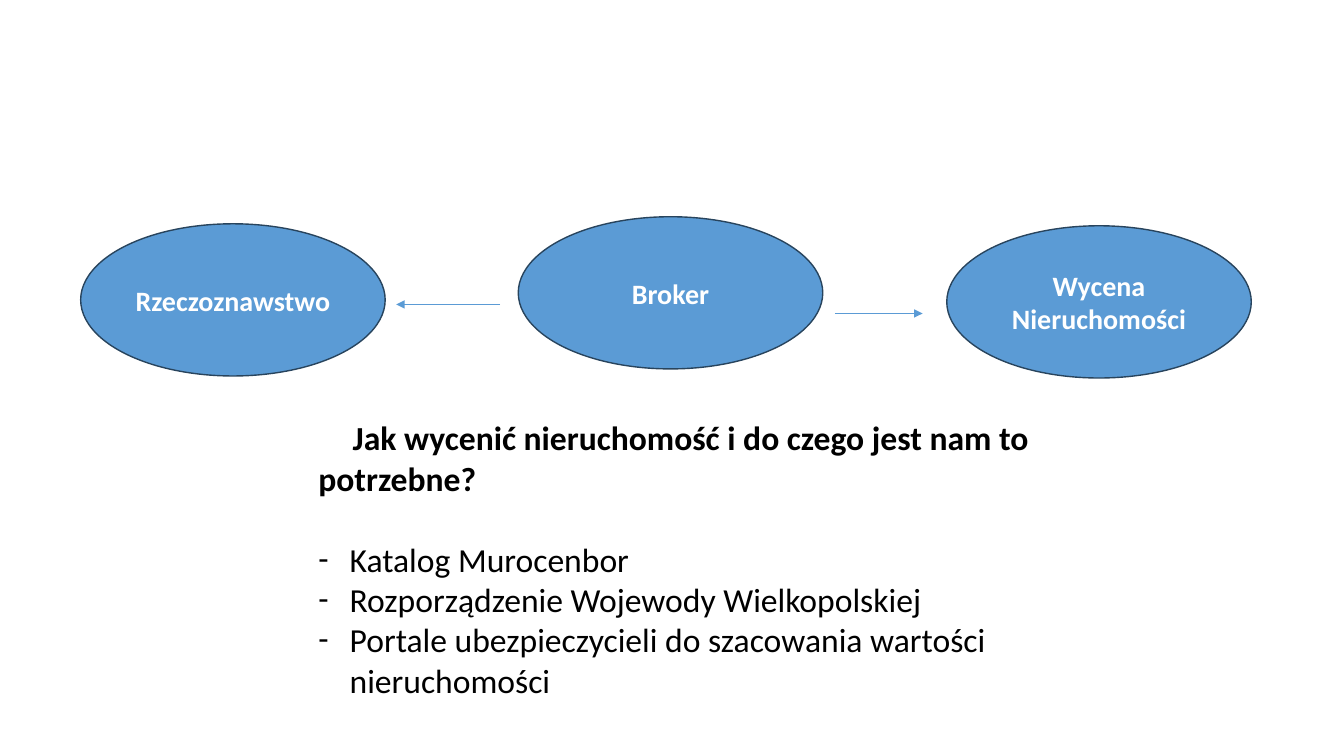
from lxml.etree import SubElement
from pptx import Presentation
from pptx.dml.color import RGBColor
from pptx.enum.shapes import MSO_CONNECTOR, MSO_SHAPE
from pptx.enum.text import MSO_ANCHOR, MSO_AUTO_SIZE, PP_ALIGN
from pptx.oxml.ns import qn
from pptx.util import Inches, Pt

FONT = "Calibri"
BLUE, OUTLINE, WHITE, BLACK = "5B9BD5", "28445D", "FFFFFF", "000000"

# label, left, top
ROLES = [
    ("Rzeczoznawstwo", 0.8, 2.22),
    ("Broker", 5.14, 2.15),
    ("Wycena Nieruchomości", 9.39, 2.24),
]
ROLE_WIDTH, ROLE_HEIGHT = 3.02, 1.51

# start x, end x, y
ARROWS = [(4.96, 3.93, 3.02), (8.28, 9.15, 3.11)]

QUESTION = "Jak wycenić nieruchomość i do czego jest nam to potrzebne?"
SOURCES = [
    "Katalog Murocenbor",
    "Rozporządzenie Wojewody Wielkopolskiej",
    "Portale ubezpieczycieli do szacowania wartości nieruchomości",
]
QUESTION_INDENT, BULLET_INDENT = 0.34, 0.31


def color(value):
    return RGBColor.from_string(value)


def add_span(para, text, size, fill, bold=False):
    span = para.add_run()
    span.text = text
    span.font.name = FONT
    span.font.size = Pt(size)
    span.font.bold = bold
    span.font.color.rgb = color(fill)


def add_arrow(page, start, end, y):
    arrow = page.shapes.add_connector(
        MSO_CONNECTOR.STRAIGHT, Inches(start), Inches(y), Inches(end), Inches(y))
    arrow.line.color.rgb = color(BLUE)
    arrow.line.width = Pt(0.5)
    SubElement(arrow.line._get_or_add_ln(), qn("a:tailEnd"), type="triangle")
    SubElement(arrow._element.spPr, qn("a:effectLst"))


def add_role(page, label, left, top):
    oval = page.shapes.add_shape(
        MSO_SHAPE.OVAL, Inches(left), Inches(top),
        Inches(ROLE_WIDTH), Inches(ROLE_HEIGHT))
    oval.shadow.inherit = False
    oval.fill.solid()
    oval.fill.fore_color.rgb = color(BLUE)
    oval.line.color.rgb = color(OUTLINE)
    oval.line.width = Pt(1)
    frame = oval.text_frame
    frame.word_wrap = True
    frame.vertical_anchor = MSO_ANCHOR.MIDDLE
    para = frame.paragraphs[0]
    para.alignment = PP_ALIGN.CENTER
    add_span(para, label, 20, WHITE, bold=True)


def set_indent(para, left, first):
    """Set the left margin and first-line indent, in inches."""
    properties = para._p.get_or_add_pPr()
    properties.set("marL", str(Inches(left)))
    properties.set("indent", str(Inches(first)))
    return properties


def add_question(page):
    box = page.shapes.add_textbox(
        Inches(3.06), Inches(4.09), Inches(8.6), Inches(2.93))
    frame = box.text_frame
    frame.word_wrap = True
    frame.auto_size = MSO_AUTO_SIZE.SHAPE_TO_FIT_TEXT
    heading = frame.paragraphs[0]
    set_indent(heading, 0, QUESTION_INDENT)
    heading.space_after = Pt(29)
    add_span(heading, QUESTION, 24, BLACK, bold=True)
    for source in SOURCES:
        para = frame.add_paragraph()
        properties = set_indent(para, BULLET_INDENT, -BULLET_INDENT)
        SubElement(properties, qn("a:buFont"), typeface=FONT)
        SubElement(properties, qn("a:buChar"), char="-")
        add_span(para, source, 24, BLACK)


def main():
    deck = Presentation()
    deck.slide_width, deck.slide_height = Inches(13.33), Inches(7.5)
    page = deck.slides.add_slide(deck.slide_layouts[6])
    for arrow in ARROWS:
        add_arrow(page, *arrow)
    for role in ROLES:
        add_role(page, *role)
    add_question(page)
    deck.save("out.pptx")


if __name__ == "__main__":
    main()
